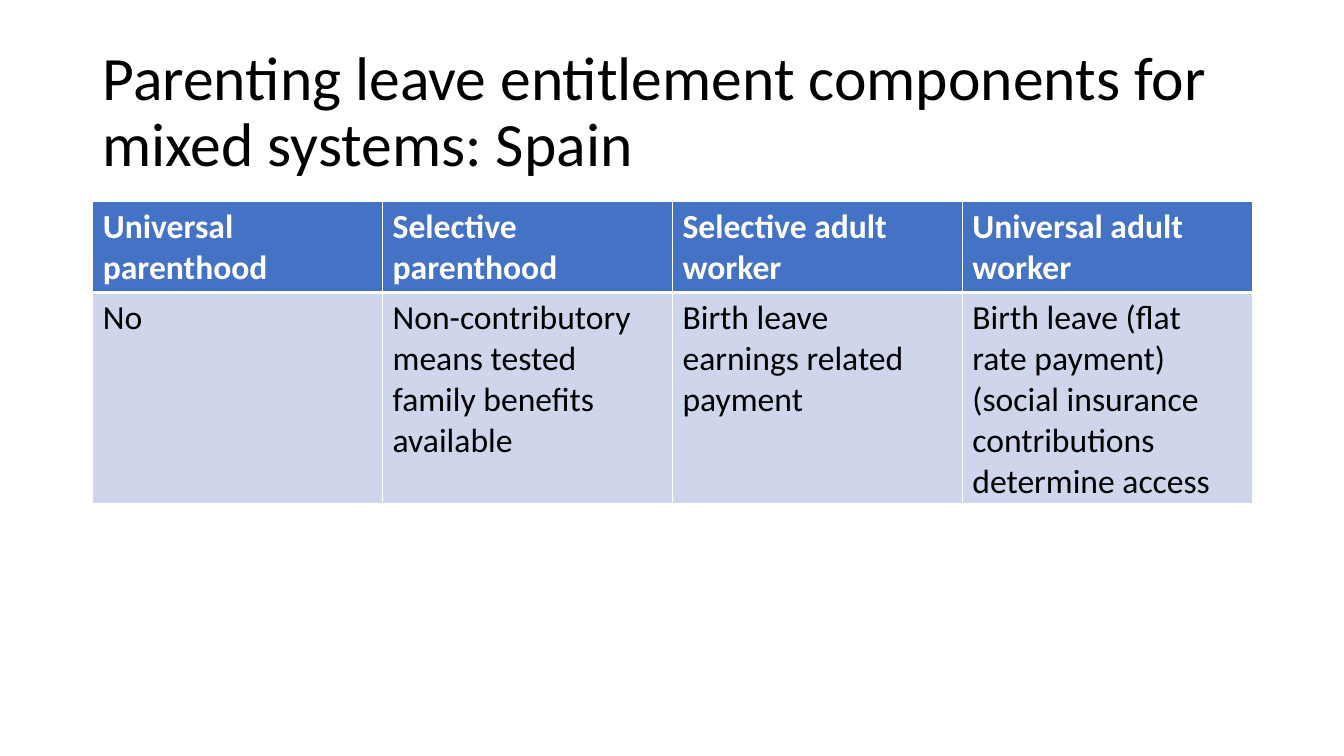
from lxml import etree
from pptx import Presentation
from pptx.dml.color import RGBColor
from pptx.enum.text import MSO_ANCHOR
from pptx.oxml.ns import qn
from pptx.util import Inches, Pt

MIDDLE = MSO_ANCHOR.MIDDLE
WHITE, BLACK, BLUE, PALE_BLUE = "FFFFFF", "000000", "4472C4", "CFD5EA"

LEAVE_COMPONENTS = [
    ("Universal parenthood", "No"),
    ("Selective parenthood",
     "Non-contributory\nmeans tested\nfamily benefits\navailable"),
    ("Selective adult worker", "Birth leave\nearnings related\npayment"),
    ("Universal adult worker",
     "Birth leave (flat\nrate payment)\n(social insurance\ncontributions\ndetermine access"),
]


def color(hex_string):
    return RGBColor.from_string(hex_string)


class SlideBuilder:
    """Holds the font and the current slide, and adds styled elements to it."""

    def __init__(self, slide, font_name):
        self.slide = slide
        self.font_name = font_name

    def style_text(self, text_frame, size, text_color, bold=False):
        for paragraph in text_frame.paragraphs:
            for run in paragraph.runs:
                run.font.name = self.font_name
                run.font.size = Pt(size)
                run.font.bold = bold
                run.font.color.rgb = color(text_color)

    def add_title(self, text, left, top, width, height):
        shape = self.slide.shapes.add_textbox(
            Inches(left), Inches(top), Inches(width), Inches(height))
        text_frame = shape.text_frame
        text_frame.word_wrap = True
        text_frame.vertical_anchor = MIDDLE
        text_frame.text = text
        text_frame.paragraphs[0].line_spacing = 0.9
        self.style_text(text_frame, 44, BLACK)

    def add_borders(self, cell, widths):
        properties = cell._tc.get_or_add_tcPr()
        for side, width in widths.items():
            line = etree.SubElement(properties, qn(f"a:ln{side}"), w=str(Pt(width)))
            fill = etree.SubElement(line, qn("a:solidFill"))
            etree.SubElement(fill, qn("a:srgbClr"), val=WHITE)

    def fill_cell(self, cell, text, is_header):
        cell.text = text
        self.style_text(cell.text_frame, 24, WHITE if is_header else BLACK, is_header)
        self.add_borders(cell, {"L": 1, "R": 1,
                                "T": 1 if is_header else 3,
                                "B": 3 if is_header else 1})
        cell.fill.solid()
        cell.fill.fore_color.rgb = color(BLUE if is_header else PALE_BLUE)

    def add_table(self, columns, left, top, width, row_heights):
        table = self.slide.shapes.add_table(
            len(row_heights), len(columns), Inches(left), Inches(top),
            Inches(width), Inches(sum(row_heights))).table
        for row, height in zip(table.rows, row_heights):
            row.height = Inches(height)
        for column_index, texts in enumerate(columns):
            for row_index, text in enumerate(texts):
                self.fill_cell(table.cell(row_index, column_index), text, row_index == 0)


def main():
    presentation = Presentation()
    presentation.slide_width = Inches(13.33)
    presentation.slide_height = Inches(7.5)
    slide = presentation.slides.add_slide(presentation.slide_layouts[6])
    builder = SlideBuilder(slide, "Calibri")
    builder.add_title("Parenting leave entitlement components for mixed systems: Spain",
                      0.92, 0.4, 11.5, 1.45)
    builder.add_table(LEAVE_COMPONENTS, 0.92, 2, 11.5, [0.9, 2.1])
    presentation.save("out.pptx")


if __name__ == "__main__":
    main()
